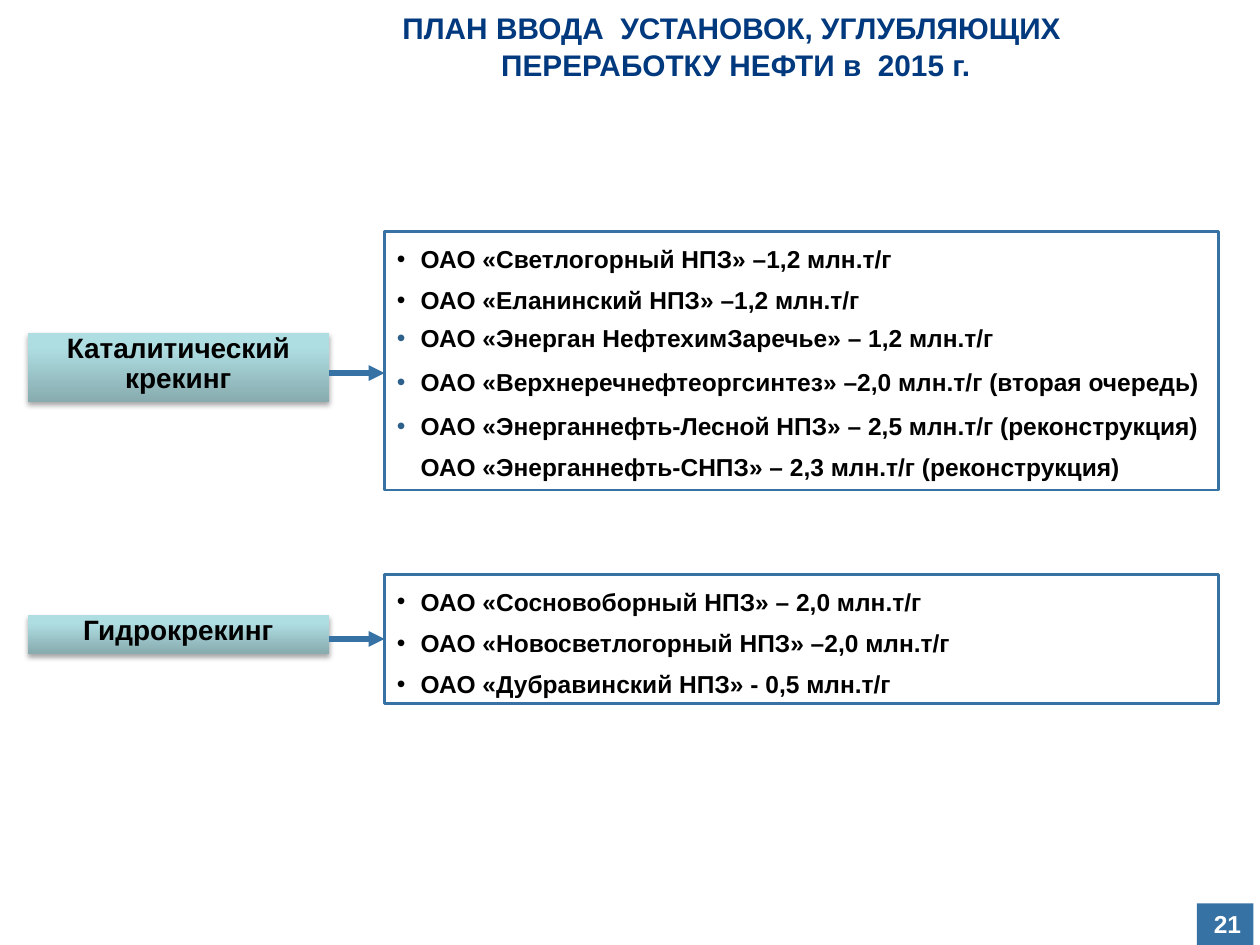
import pptx
import pptx.util
import pptx.dml.color
import pptx.enum.dml
import pptx.enum.shapes
import pptx.enum.text
import pptx.oxml
import pptx.oxml.ns

Cm = pptx.util.Cm
Pt = pptx.util.Pt
Align = pptx.enum.text.PP_ALIGN
Anchor = pptx.enum.text.MSO_ANCHOR
RECTANGLE = pptx.enum.shapes.MSO_SHAPE.RECTANGLE
NAMESPACE = pptx.oxml.ns.nsdecls("a")

TITLE = ["ПЛАН ВВОДА  УСТАНОВОК, УГЛУБЛЯЮЩИХ ", "ПЕРЕРАБОТКУ НЕФТИ в  2015 г."]
PAGE_NUMBER = "21"
BLACK, WHITE, NAVY, BLUE, BULLET_BLUE = "000000", "FFFFFF", "00397E", "3672A4", "2D608B"
LABEL_DARK, LABEL_LIGHT = "87ABAE", "AFDEE2"

WIDE = (1.2, 3.5, BLACK)
TIGHT = (1.2, 1.5, BULLET_BLUE)
LOOSE = (1.4, 1.5, BULLET_BLUE)

PROCESSES = [
    {
        "label": "Каталитический крекинг",
        "label_top": 6.71, "label_height": 1.4,
        "list_top": 4.67, "list_height": 5.21,
        "arrow_y": 7.52,
        "plants": [
            ("ОАО «Светлогорный НПЗ» –1,2 млн.т/г", WIDE),
            ("ОАО «Еланинский НПЗ» –1,2 млн.т/г", WIDE),
            ("ОАО «Энерган НефтехимЗаречье» – 1,2 млн.т/г", TIGHT),
            ("ОАО «Верхнеречнефтеоргсинтез» –2,0 млн.т/г (вторая очередь)", LOOSE),
            ("ОАО «Энерганнефть-Лесной НПЗ» – 2,5 млн.т/г (реконструкция) "
             "ОАО «Энерганнефть-СНПЗ» – 2,3 млн.т/г (реконструкция)", LOOSE),
        ],
    },
    {
        "label": "Гидрокрекинг",
        "label_top": 12.4, "label_height": 0.78,
        "list_top": 11.58, "list_height": 2.6,
        "arrow_y": None,
        "plants": [
            ("ОАО «Сосновоборный НПЗ» – 2,0 млн.т/г", WIDE),
            ("ОАО «Новосветлогорный НПЗ» –2,0 млн.т/г", WIDE),
            ("ОАО «Дубравинский НПЗ» - 0,5 млн.т/г", WIDE),
        ],
    },
]
LABEL_LEFT, LABEL_WIDTH = 0.56, 6.07
LIST_LEFT, LIST_WIDTH = 7.75, 16.81


def color(value):
    return pptx.dml.color.RGBColor.from_string(value)


def add_span(para, text, size, value):
    span = para.add_run()
    span.text = text
    span.font.name = "Arial"
    span.font.size = Pt(size)
    span.font.bold = True
    span.font.color.rgb = color(value)


def add_box(shapes, left, top, width, height, anchor, margins):
    box = shapes.add_shape(RECTANGLE, Cm(left), Cm(top), Cm(width), Cm(height))
    box.shadow.inherit = False
    box.line.fill.background()
    frame = box.text_frame
    frame.word_wrap = True
    frame.vertical_anchor = anchor
    frame.margin_left, frame.margin_top, frame.margin_right, frame.margin_bottom = map(Cm, margins)
    return box


def fill_box(box, value):
    box.fill.solid()
    box.fill.fore_color.rgb = color(value)


def add_bullet(para, value):
    properties = para._p.get_or_add_pPr()
    properties.set("marL", str(Cm(0.48)))
    properties.set("indent", str(-Cm(0.48)))
    for xml in (
        f'<a:buClr {NAMESPACE}><a:srgbClr val="{value}"/></a:buClr>',
        f'<a:buFont {NAMESPACE} typeface="Arial"/>',
        f'<a:buChar {NAMESPACE} char="•"/>',
    ):
        properties.append(pptx.oxml.parse_xml(xml))


def add_list(shapes, process):
    box = add_box(shapes, LIST_LEFT, process["list_top"], LIST_WIDTH, process["list_height"],
                  Anchor.TOP, (0.25, 0.13, 0.05, 0.13))
    fill_box(box, WHITE)
    box.line.color.rgb = color(BLUE)
    box.line.width = Pt(1.5)
    for index, (text, (spacing, before, bullet)) in enumerate(process["plants"]):
        para = box.text_frame.add_paragraph() if index else box.text_frame.paragraphs[0]
        add_bullet(para, bullet)
        para.alignment = Align.LEFT
        para.line_spacing = spacing
        if index:
            para.space_before = Pt(before)
        add_span(para, text, 14, BLACK)
    return box


def add_label(shapes, process):
    box = add_box(shapes, LABEL_LEFT, process["label_top"], LABEL_WIDTH, process["label_height"],
                  Anchor.TOP, (0.25, 0.03, 0.25, 0.13))
    box.fill.gradient()
    box.fill.gradient_angle = 90
    for stop, position, value in zip(box.fill.gradient_stops, (0, 0.8), (LABEL_DARK, LABEL_LIGHT)):
        stop.position = position
        stop.color.rgb = color(value)
    effects = box._element.spPr.find(pptx.oxml.ns.qn("a:effectLst"))
    effects.append(pptx.oxml.parse_xml(
        f'<a:outerShdw {NAMESPACE} blurRad="{Pt(3.1)}" dist="{Pt(1.8)}" dir="5400000" rotWithShape="0">'
        f'<a:srgbClr val="{BLACK}"><a:alpha val="35000"/></a:srgbClr></a:outerShdw>'))
    para = box.text_frame.paragraphs[0]
    para.alignment = Align.CENTER
    para.line_spacing = 0.9
    add_span(para, process["label"], 16, BLACK)


def add_arrow(shapes, process, plant_list):
    height = process["arrow_y"]
    y = Cm(height) if height else plant_list.top + plant_list.height // 2
    arrow = shapes.add_connector(pptx.enum.shapes.MSO_CONNECTOR.STRAIGHT,
                                 Cm(LABEL_LEFT + LABEL_WIDTH), y, Cm(LIST_LEFT), y)
    if height is None:
        arrow.end_connect(plant_list, 1)
    arrow.line.color.rgb = color(BLUE)
    arrow.line.width = Pt(3)
    arrow.line._get_or_add_ln().append(pptx.oxml.parse_xml(f'<a:tailEnd {NAMESPACE} type="triangle"/>'))
    arrow._element.spPr.append(pptx.oxml.parse_xml(f"<a:effectLst {NAMESPACE}/>"))


def add_title(page):
    title = page.shapes.title
    title.left, title.top, title.width, title.height = Cm(3.1), Cm(-0.13), Cm(23.47), Cm(2.08)
    frame = title.text_frame
    frame.word_wrap = True
    frame.auto_size = pptx.enum.text.MSO_AUTO_SIZE.NONE
    frame.vertical_anchor = Anchor.MIDDLE
    para = frame.paragraphs[0]
    para.alignment = Align.CENTER
    para.line_spacing = 1.05
    for index, line in enumerate(TITLE):
        if index:
            para.add_line_break()
        add_span(para, line, 17, NAVY)


def add_page_number(page):
    box = add_box(page.shapes, 24.13, 18.21, 1.14, 0.84, Anchor.MIDDLE, (0, 0, 0.25, 0))
    fill_box(box, BLUE)
    para = box.text_frame.paragraphs[0]
    para.alignment = Align.RIGHT
    add_span(para, PAGE_NUMBER, 14, WHITE)


def main():
    deck = pptx.Presentation()
    deck.slide_width, deck.slide_height = Cm(25.4), Cm(19.05)
    page = deck.slides.add_slide(deck.slide_layouts[5])
    add_page_number(page)
    add_title(page)
    for process in PROCESSES:
        group = page.shapes.add_group_shape()
        plant_list = add_list(group.shapes, process)
        add_label(group.shapes, process)
        add_arrow(group.shapes, process, plant_list)
    deck.save("out.pptx")


if __name__ == "__main__":
    main()
